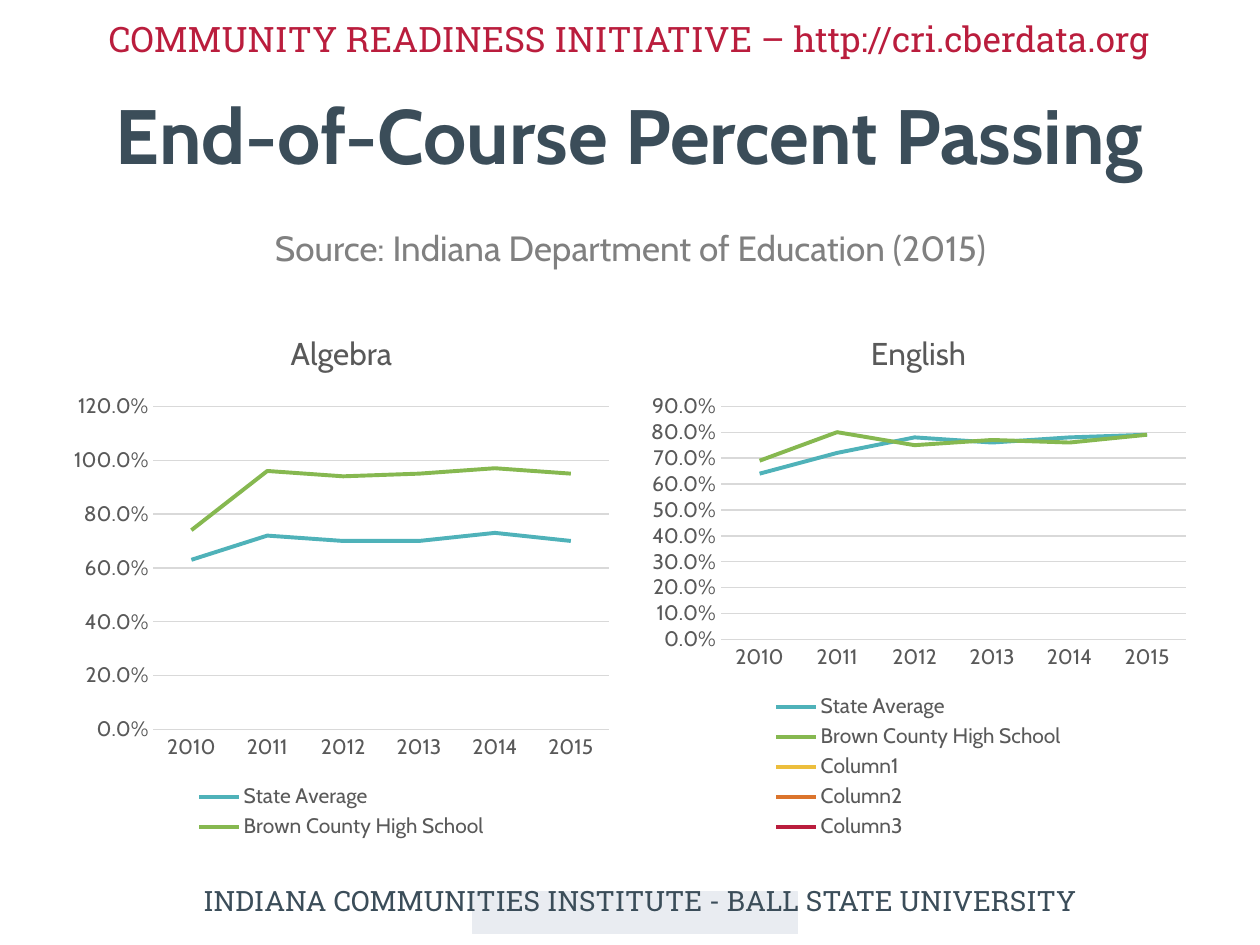
import pptx
import pptx.chart.data
import pptx.dml.color
import pptx.enum.chart
import pptx.enum.shapes
import pptx.enum.text
import pptx.util
from dataclasses import dataclass

WIDTH, HEIGHT = 10, 7.5


@dataclass(frozen=True)
class Theme:
    heading_font: str = "Roboto Slab"
    body_font: str = "Cabin"
    slate: str = "3B4D59"
    crimson: str = "BA1D3D"
    source_gray: str = "808080"
    label_gray: str = "595959"
    grid_gray: str = "D9D9D9"
    tab: str = "E9ECF1"
    series: tuple = ("4FB2B9", "86B850", "ECBE3D", "DB742C", "BA1D3D")
    title_size: int = 44
    banner_size: int = 20
    chart_title_size: int = 18
    footer_size: int = 16
    label_size: int = 12
    series_weight: float = 2.25
    hairline: float = 0.75


THEME = Theme()
YEARS = ["2010", "2011", "2012", "2013", "2014", "2015"]
NO_SCORES = [None] * len(YEARS)
ALGEBRA = {
    "State Average": [0.63, 0.72, 0.70, 0.70, 0.73, 0.70],
    "Brown County High School": [0.74, 0.96, 0.94, 0.95, 0.97, 0.95],
}
ENGLISH = {
    "State Average": [0.64, 0.72, 0.78, 0.76, 0.78, 0.79],
    "Brown County High School": [0.69, 0.80, 0.75, 0.77, 0.76, 0.79],
    "Column1": NO_SCORES,
    "Column2": NO_SCORES,
    "Column3": NO_SCORES,
}


def rgb(color):
    return pptx.dml.color.RGBColor.from_string(color)


def share(left, top, width, height):
    """Turn inches on the slide into shares of its size."""
    return left / WIDTH, top / HEIGHT, width / WIDTH, height / HEIGHT


def place(box):
    """Turn shares of the slide's size into lengths."""
    return [pptx.util.Inches(part * side)
            for part, side in zip(box, (WIDTH, HEIGHT) * 2)]


def style_font(font, size, color, name=THEME.body_font, bold=False):
    font.name, font.size, font.bold = name, pptx.util.Pt(size), bold
    font.color.rgb = rgb(color)


def style_line(line, color, weight=THEME.hairline):
    line.color.rgb = rgb(color)
    line.width = pptx.util.Pt(weight)


def add_centered_text(slide, box, wording, size, color, font=THEME.body_font,
                      bold=False, anchor=pptx.enum.text.MSO_ANCHOR.TOP):
    frame = slide.shapes.add_textbox(*place(box)).text_frame
    frame.word_wrap = True
    frame.vertical_anchor = anchor
    paragraph = frame.paragraphs[0]
    paragraph.text = wording
    paragraph.alignment = pptx.enum.text.PP_ALIGN.CENTER
    style_font(paragraph.font, size, color, font, bold)


def add_footer(slide, box):
    left, top, width, height = box
    tab_box = (0.375, top + 0.12 / HEIGHT, 0.258, 0.044)
    tab = slide.shapes.add_shape(
        pptx.enum.shapes.MSO_SHAPE.RECTANGLE, *place(tab_box))
    tab.shadow.inherit = False
    tab.fill.solid()
    tab.fill.fore_color.rgb = rgb(THEME.tab)
    style_line(tab.line, THEME.tab)
    add_centered_text(slide, box,
                      "INDIANA COMMUNITIES INSTITUTE - BALL STATE UNIVERSITY",
                      THEME.footer_size, THEME.slate, THEME.heading_font)


def add_header(slide, banner_box, title_box, source_box):
    add_centered_text(slide, banner_box,
                      "COMMUNITY READINESS INITIATIVE – http://cri.cberdata.org",
                      THEME.banner_size, THEME.crimson, THEME.heading_font)
    add_centered_text(slide, title_box, "End-of-Course Percent Passing",
                      THEME.title_size, THEME.slate, bold=True,
                      anchor=pptx.enum.text.MSO_ANCHOR.MIDDLE)
    add_centered_text(slide, source_box,
                      "Source: Indiana Department of Education (2015)",
                      THEME.banner_size, THEME.source_gray)


def add_passing_chart(slide, box, subject, scores):
    passing = pptx.chart.data.CategoryChartData(number_format="0.0%")
    passing.categories = YEARS
    for school, rates in scores.items():
        passing.add_series(school, rates)
    chart = slide.shapes.add_chart(
        pptx.enum.chart.XL_CHART_TYPE.LINE, *place(box), passing).chart
    style_font(chart.font, THEME.label_size, THEME.label_gray)

    chart.has_title = True
    heading = chart.chart_title.text_frame.paragraphs[0]
    heading.text = subject
    style_font(heading.font, THEME.chart_title_size, THEME.label_gray)
    chart.chart_title.include_in_layout = False

    chart.has_legend = True
    chart.legend.position = pptx.enum.chart.XL_LEGEND_POSITION.BOTTOM
    chart.legend.include_in_layout = False
    style_font(chart.legend.font, THEME.label_size, THEME.label_gray)

    for axis in (chart.category_axis, chart.value_axis):
        axis.major_tick_mark = pptx.enum.chart.XL_TICK_MARK.NONE
        axis.minor_tick_mark = pptx.enum.chart.XL_TICK_MARK.NONE
        style_font(axis.tick_labels.font, THEME.label_size, THEME.label_gray)
    style_line(chart.category_axis.format.line, THEME.grid_gray)
    rate_axis = chart.value_axis
    rate_axis.format.line.fill.background()
    rate_axis.has_major_gridlines = True
    style_line(rate_axis.major_gridlines.format.line, THEME.grid_gray)
    rate_axis.tick_labels.number_format = "0.0%"
    rate_axis.tick_labels.number_format_is_linked = False

    plot = chart.plots[0]
    plot.vary_by_categories = False
    for school, color in zip(plot.series, THEME.series):
        school.smooth = False
        school.marker.style = pptx.enum.chart.XL_MARKER_STYLE.NONE
        style_line(school.format.line, color, THEME.series_weight)


def add_chart_row(slide, box, charts, gap):
    """Share the box's width equally among the charts."""
    left, top, width, height = box
    column = (width - gap * (len(charts) - 1)) / len(charts)
    for index, (subject, scores) in enumerate(charts.items()):
        cell = (left + index * (column + gap), top, column, height)
        add_passing_chart(slide, cell, subject, scores)


def main():
    deck = pptx.Presentation()
    deck.slide_width = pptx.util.Inches(WIDTH)
    deck.slide_height = pptx.util.Inches(HEIGHT)
    slide = deck.slides.add_slide(deck.slide_layouts[6])
    add_footer(slide, share(0.58, 6.96, 9, 0.37))
    add_header(slide,
               banner_box=share(0.08, 0.09, 9.83, 0.44),
               title_box=share(0.5, 0.58, 9, 0.97),
               source_box=share(0.92, 1.75, 8.17, 0.5))
    add_chart_row(slide, share(0.5, 2.45, 9, 4.25),
                  {"Algebra": ALGEBRA, "English": ENGLISH}, gap=0.16 / WIDTH)
    deck.save("out.pptx")


if __name__ == "__main__":
    main()
